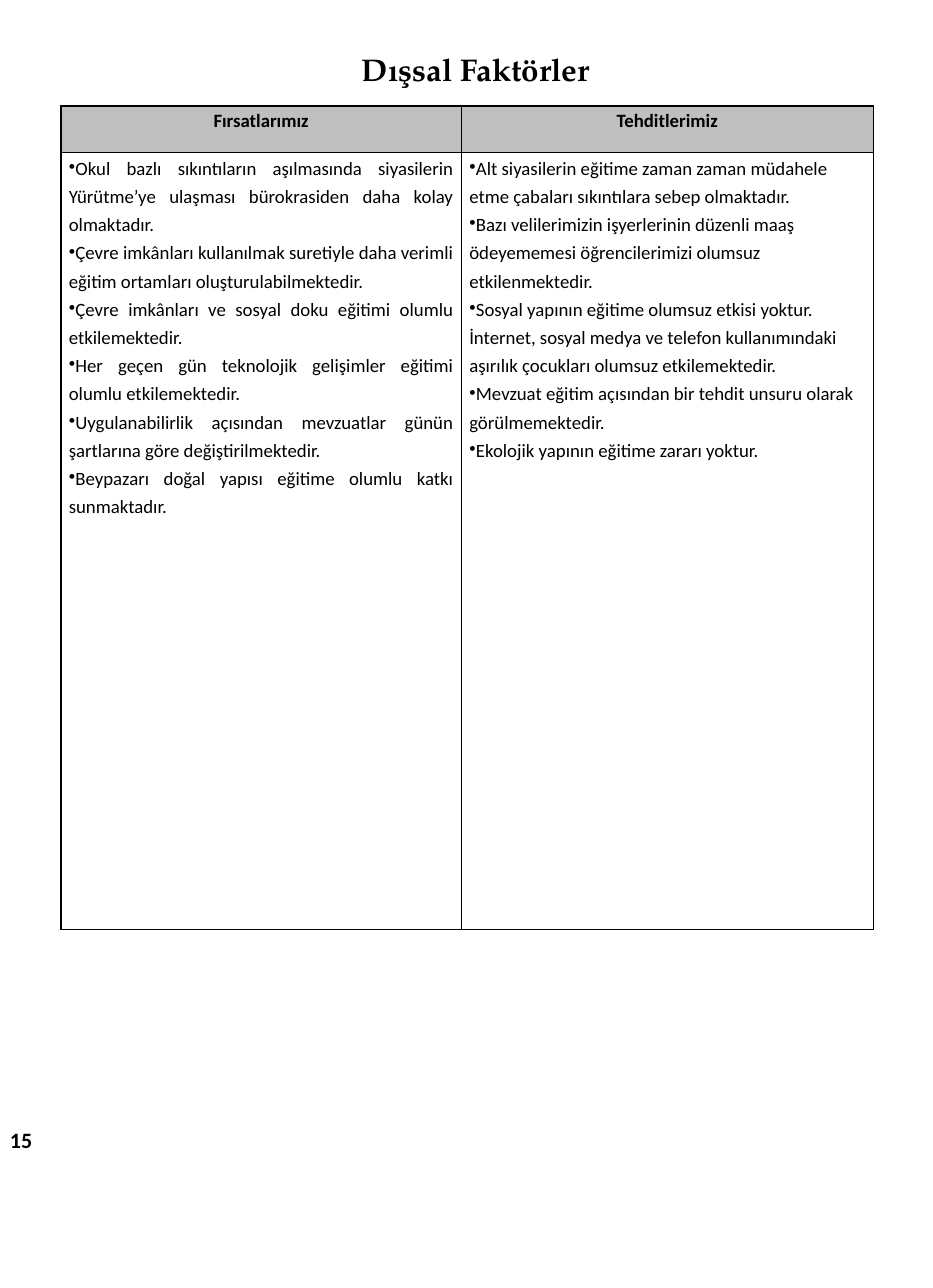
"""Build a page with a two-column table of outside factors."""
from dataclasses import dataclass

from lxml.etree import SubElement as Sub
from pptx import Presentation as Deck
from pptx.dml.color import RGBColor as Color
from pptx.enum.text import MSO_AUTO_SIZE as Fit, PP_ALIGN as Align
from pptx.oxml.ns import qn
from pptx.util import Inches, Pt


@dataclass(frozen=True)
class Theme:
    """Hold the colours, fonts and type sizes."""
    ink: str = "000000"
    head: str = "BFBFBF"
    serif: str = "TeX Gyre Pagella"
    sans: str = "Calibri"
    title: int = 20
    page: int = 14
    body: int = 12
    rule: int = 1


@dataclass(frozen=True)
class Label:
    """Describe a free line of bold text."""
    text: str
    box: tuple[float, float, float, float]
    font: str
    size: int
    wrap: bool


@dataclass(frozen=True)
class Item:
    """Describe one point in a column."""
    text: str
    mark: bool = True


@dataclass(frozen=True)
class Column:
    """Describe one table column."""
    head: str
    width: float
    align: Align
    items: tuple[Item, ...]


THEME = Theme()
TOP, LEFT = 0.94, 0.54
ROWS = (0.41, 6.89)
PAD = {"margin_left": Inches(0.07), "margin_right": Inches(0.07),
       "margin_top": 0, "margin_bottom": 0}
HEAD = {"alignment": Align.CENTER, "line_spacing": 1.15, "space_after": Pt(6)}

LABELS = (
    Label("Dışsal Faktörler", (3.11, 0.4, 2.32, 0.44), THEME.serif, THEME.title, False),
    Label("15", (-0.01, 9.94, 0.51, 0.34), THEME.sans, THEME.page, True),
)

COLUMNS = (
    Column("Fırsatlarımız", 3.55, Align.JUSTIFY, (
        Item("Okul bazlı sıkıntıların aşılmasında siyasilerin Yürütme’ye ulaşması "
             "bürokrasiden daha kolay olmaktadır."),
        Item("Çevre imkânları kullanılmak suretiyle daha verimli eğitim ortamları "
             "oluşturulabilmektedir."),
        Item("Çevre imkânları ve sosyal doku eğitimi olumlu etkilemektedir."),
        Item("Her geçen gün teknolojik gelişimler eğitimi olumlu etkilemektedir."),
        Item("Uygulanabilirlik açısından mevzuatlar günün şartlarına göre "
             "değiştirilmektedir."),
        Item("Beypazarı doğal yapısı eğitime olumlu katkı sunmaktadır."),
    )),
    Column("Tehditlerimiz", 3.65, Align.LEFT, (
        Item("Alt siyasilerin eğitime zaman zaman müdahele etme çabaları sıkıntılara "
             "sebep olmaktadır."),
        Item("Bazı velilerimizin işyerlerinin düzenli maaş ödeyememesi "
             "öğrencilerimizi olumsuz etkilenmektedir."),
        Item("Sosyal yapının eğitime olumsuz etkisi yoktur."),
        Item("İnternet, sosyal medya ve telefon kullanımındaki aşırılık çocukları "
             "olumsuz etkilemektedir.", False),
        Item("Mevzuat eğitim açısından bir tehdit unsuru olarak görülmemektedir."),
        Item("Ekolojik yapının eğitime zararı yoktur."),
    )),
)


def apply(target, form: dict) -> None:
    """Set each format value on the target."""
    for name, value in form.items():
        setattr(target, name, value)


def write(para, text: str, font: str, size: int, bold: bool) -> None:
    """Add one styled run to a paragraph."""
    run = para.add_run()
    run.text = text
    apply(run.font, {"name": font, "size": Pt(size), "bold": bold})
    run.font.color.rgb = Color.from_string(THEME.ink)


def draw_label(slide, label: Label) -> None:
    """Draw a free line of text."""
    frame = slide.shapes.add_textbox(*map(Inches, label.box)).text_frame
    apply(frame, {"word_wrap": label.wrap, "auto_size": Fit.SHAPE_TO_FIT_TEXT})
    write(frame.paragraphs[0], label.text, label.font, label.size, True)


def frame_cell(cell) -> None:
    """Pad a cell and rule its four sides."""
    apply(cell, PAD)
    props = cell._tc.get_or_add_tcPr()
    for side in "LRTB":
        line = Sub(props, qn(f"a:ln{side}"), w=str(Pt(THEME.rule)))
        Sub(Sub(line, qn("a:solidFill")), qn("a:srgbClr"), val=THEME.ink)


def fill_head(cell, column: Column) -> None:
    """Fill a heading cell."""
    frame_cell(cell)
    cell.fill.solid()
    cell.fill.fore_color.rgb = Color.from_string(THEME.head)
    para = cell.text_frame.paragraphs[0]
    apply(para, HEAD)
    write(para, column.head, THEME.sans, THEME.body, True)


def fill_body(cell, column: Column) -> None:
    """Fill a cell with the points of its column."""
    frame_cell(cell)
    cell.fill.background()
    frame = cell.text_frame
    for place, item in enumerate(column.items):
        para = frame.add_paragraph() if place else frame.paragraphs[0]
        apply(para, {"alignment": column.align, "line_spacing": Pt(18)})
        if item.mark:
            Sub(para._p.get_or_add_pPr(), qn("a:buChar"), char="•")
        write(para, item.text, THEME.sans, THEME.body, False)


def draw_table(slide, columns: tuple[Column, ...]) -> None:
    """Draw the table of factors."""
    width = sum(column.width for column in columns)
    table = slide.shapes.add_table(
        len(ROWS), len(columns), Inches(LEFT), Inches(TOP),
        Inches(width), Inches(sum(ROWS))).table
    apply(table, {"first_row": False, "horz_banding": False})
    for row, height in zip(table.rows, ROWS):
        row.height = Inches(height)
    for place, column in enumerate(columns):
        table.columns[place].width = Inches(column.width)
        fill_head(table.cell(0, place), column)
        fill_body(table.cell(1, place), column)


def main() -> None:
    """Build and save the page."""
    deck = Deck()
    apply(deck, {"slide_width": Inches(8.27), "slide_height": Inches(11.42)})
    slide = deck.slides.add_slide(deck.slide_layouts[6])
    for label in LABELS:
        draw_label(slide, label)
    draw_table(slide, COLUMNS)
    deck.save("out.pptx")


if __name__ == "__main__":
    main()
